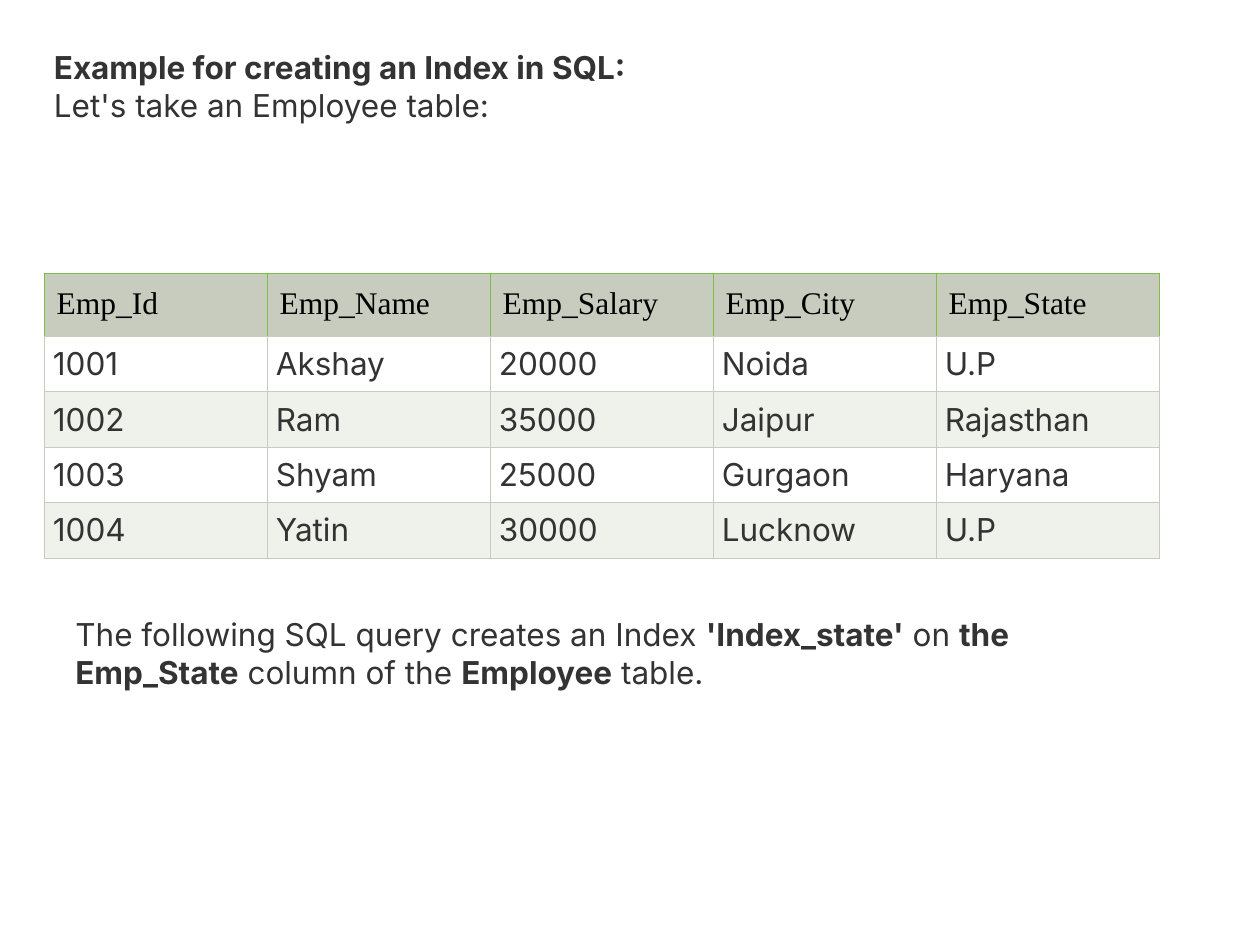
from lxml import etree
from pptx import Presentation
from pptx import util as u
from pptx.dml.color import RGBColor
from pptx.enum import text
from pptx.oxml.ns import qn

BODY = {"name": "Inter", "color": "333333"}
HEAD = {"name": "Times New Roman", "color": "000000"}
GREY, GREEN, PALE, WHITE = "C7CCBE", "80BE4A", "EFF1EB", "FFFFFF"
JUST = text.PP_ALIGN.JUSTIFY

ROWS = [
    ["Emp_Id", "Emp_Name", "Emp_Salary", "Emp_City", "Emp_State"],
    ["1001", "Akshay", "20000", "Noida", "U.P"],
    ["1002", "Ram", "35000", "Jaipur", "Rajasthan"],
    ["1003", "Shyam", "25000", "Gurgaon", "Haryana"],
    ["1004", "Yatin", "30000", "Lucknow", "U.P"],
]


def paint(item, tone):
    """Set a solid colour on a fill or a font."""
    if hasattr(item, "solid"):
        item.solid()
        item.fore_color.rgb = RGBColor.from_string(tone)
    else:
        item.color.rgb = RGBColor.from_string(tone)


def add_run(para, words, style, bold=False):
    run = para.add_run()
    run.text = words
    look = {"name": style["name"], "size": u.Pt(18), "bold": bold}
    for key, value in look.items():
        setattr(run.font, key, value)
    paint(run.font, style["color"])


def add_text(slide, box, paras, align=None):
    """Add a text box; each paragraph is a list of (words, bold)."""
    frame = slide.shapes.add_textbox(*map(u.Inches, box)).text_frame
    look = {"word_wrap": True, "auto_size": text.MSO_AUTO_SIZE.SHAPE_TO_FIT_TEXT}
    for key, value in look.items():
        setattr(frame, key, value)
    for i, runs in enumerate(paras):
        para = frame.add_paragraph() if i else frame.paragraphs[0]
        para.alignment = align
        for words, bold in runs:
            add_run(para, words, BODY, bold)


def add_edges(cell, tones):
    """Draw the left, right, top and bottom borders; they precede the fill."""
    props = cell._tc.get_or_add_tcPr()
    for i, (side, tone) in enumerate(zip("LRTB", tones)):
        line = etree.Element(qn("a:ln" + side), w=str(u.Pt(0.6)))
        fill = etree.SubElement(line, qn("a:solidFill"))
        etree.SubElement(fill, qn("a:srgbClr"), val=tone)
        props.insert(i, line)


def fill_cell(cell, words, row):
    head = row == 0
    pad = u.Inches(0.1 if head else 0.07)
    for side in ("left", "right", "top", "bottom"):
        setattr(cell, "margin_" + side, pad)
    para = cell.text_frame.paragraphs[0]
    para.alignment = None if head else JUST
    add_run(para, words, HEAD if head else BODY)
    paint(cell.fill, GREY if head else WHITE if row % 2 else PALE)
    add_edges(cell, [GREEN] * 3 + [GREY] if head else [GREY] * 4)


def add_grid(slide, box, rows, heights):
    frame = slide.shapes.add_table(len(rows), len(rows[0]), *map(u.Inches, box))
    table = frame.table
    for r, (line, tall) in enumerate(zip(rows, heights)):
        table.rows[r].height = u.Inches(tall)
        for c, words in enumerate(line):
            fill_cell(table.cell(r, c), words, r)


def main():
    deck = Presentation()
    deck.slide_width, deck.slide_height = u.Inches(10), u.Inches(7.5)
    slide = deck.slides.add_slide(deck.slide_layouts[6])

    # Heading
    add_text(slide, (0.33, 0.33, 5, 0.71), [
        [("Example for creating an Index in SQL:", True)],
        [("Let's take an Employee table:", False)],
    ], JUST)

    # Employee table
    add_grid(slide, (0.35, 2.17, 8.85, 2.23), ROWS, [0.5] + [0.43] * 4)

    # Explanation of the query
    add_text(slide, (0.5, 4.83, 8, 0.71), [[
        ("The following SQL query creates an Index ", False),
        ("'Index_state'", True),
        (" on ", False),
        ("the Emp_State", True),
        (" column of the ", False),
        ("Employee", True),
        (" table.", False),
    ]])

    deck.save("out.pptx")


if __name__ == "__main__":
    main()
